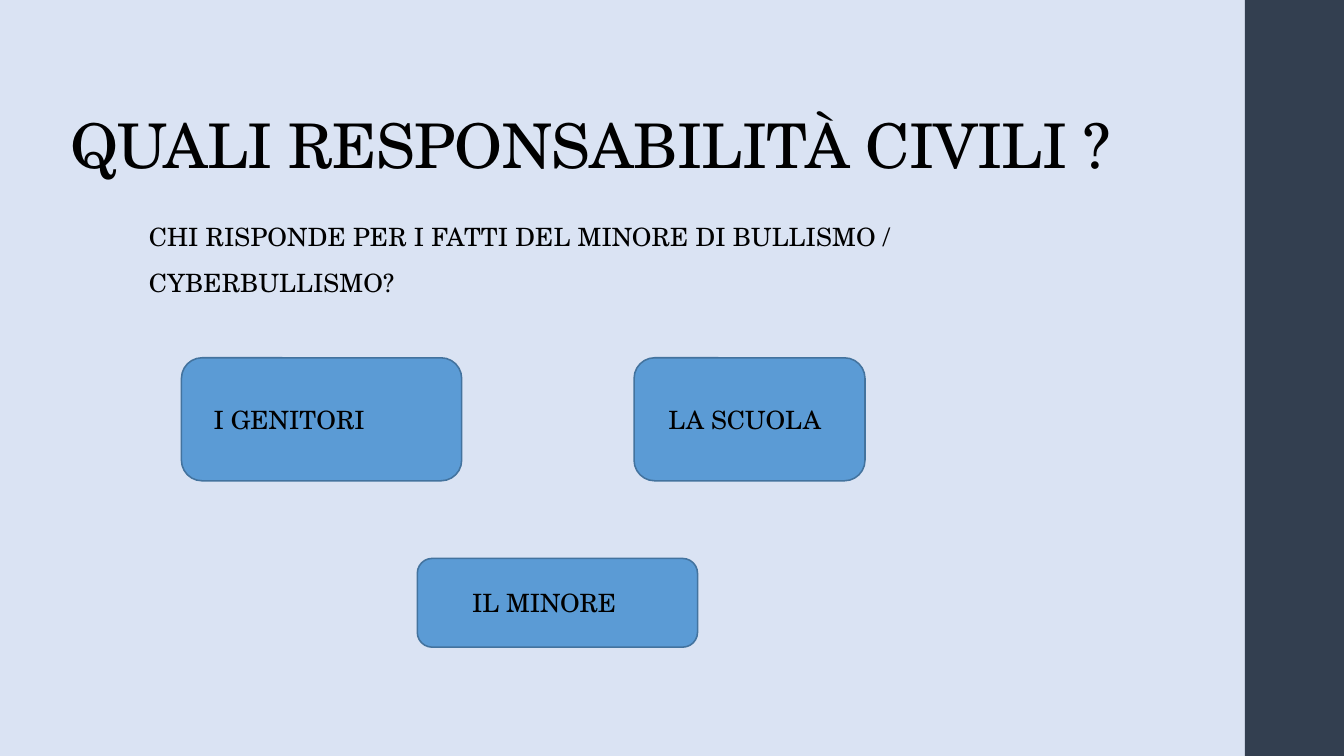
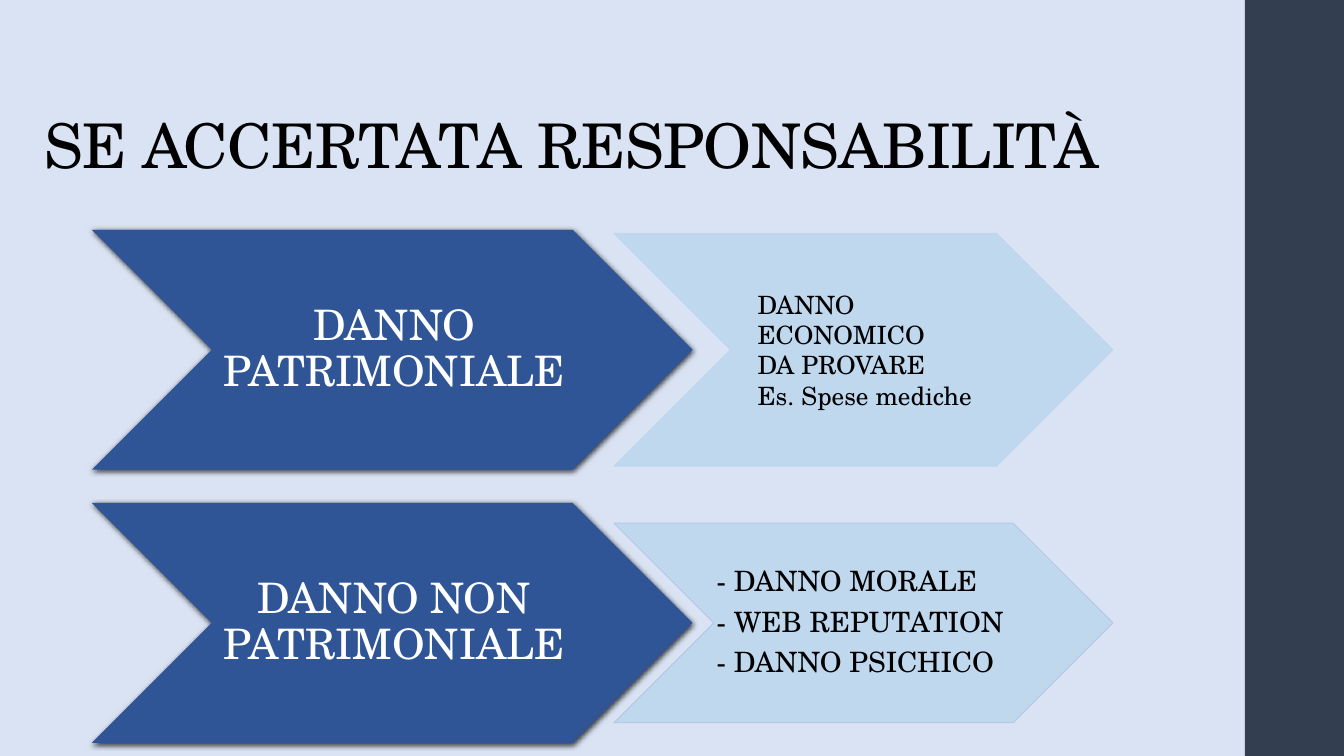
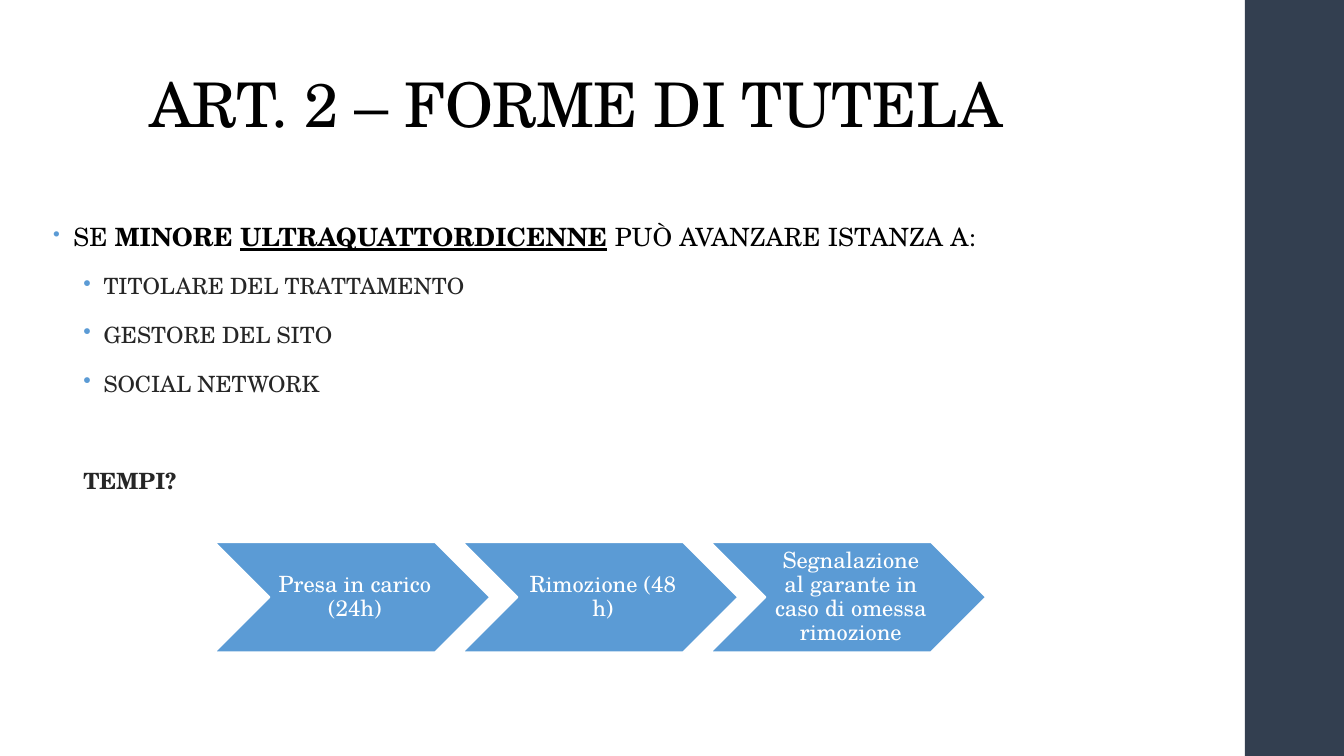
"""Three slides on civil liability and protection in cases of bullying and cyberbullying."""
from lxml import etree
from pptx import Presentation
from pptx.dml.color import RGBColor
from pptx.enum.shapes import MSO_SHAPE
from pptx.enum.text import MSO_ANCHOR, PP_ALIGN
from pptx.oxml import parse_xml
from pptx.oxml.ns import qn
from pptx.util import Inches, Pt

RECT, ROUNDED, CHEVRON = MSO_SHAPE.RECTANGLE, MSO_SHAPE.ROUNDED_RECTANGLE, MSO_SHAPE.CHEVRON
LEFT, CENTER = PP_ALIGN.LEFT, PP_ALIGN.CENTER
TOP, MIDDLE, BOTTOM = MSO_ANCHOR.TOP, MSO_ANCHOR.MIDDLE, MSO_ANCHOR.BOTTOM
FONT = "TeX Gyre Schola"
COLORS = {
    "pale": "DAE3F3", "band": "333F50", "black": "000000", "grey": "262626",
    "white": "FFFFFF", "blue": "5B9BD5", "outline": "43739E", "navy": "2F5597",
    "sky": "BDD7EE", "sky_edge": "B4C7E7",
}
RGB = {name: RGBColor.from_string(value) for name, value in COLORS.items()}
DRAWING_NS = "http://schemas.openxmlformats.org/drawingml/2006/main"
SHADOW = (
    f'<a:effectLst xmlns:a="{DRAWING_NS}"><a:outerShdw blurRad="50800" dist="15240" dir="5400000" '
    'rotWithShape="0"><a:srgbClr val="000000"><a:alpha val="75000"/></a:srgbClr>'
    '</a:outerShdw></a:effectLst>'
)

BAND_X = 92.63
TITLE_Y, TITLE_RIGHT = 5.33, 89.85
BODY_Y, BODY_H, BODY_RIGHT = 26.67, 63.47, 80.85

deck = Presentation()
deck.slide_width, deck.slide_height = Inches(13.33), Inches(7.5)


def place(slide, kind, x, y, w, h, fill=None, line=None, width=1.1):
    """Add a shape, or a text box when kind is None, at percentages of the slide."""
    across, down = deck.slide_width / 100, deck.slide_height / 100
    area = [round(v) for v in (x * across, y * down, w * across, h * down)]
    if kind is None:
        return slide.shapes.add_textbox(*area)
    shape = slide.shapes.add_shape(kind, *area)
    shape.shadow.inherit = False
    shape.fill.solid()
    shape.fill.fore_color.rgb = RGB[fill]
    if line:
        shape.line.color.rgb = RGB[line]
        shape.line.width = Pt(width)
    else:
        shape.line.fill.background()
    return shape


def write(shape, text, size, color="black", align=LEFT, anchor=MIDDLE, leading=1.0,
          before=0, after=0, tracking=0, insets=(0.1, 0.05, 0.1, 0.05)):
    """Fill a shape with uniformly styled paragraphs and return them."""
    frame = shape.text_frame
    frame.word_wrap, frame.vertical_anchor = True, anchor
    frame.margin_left, frame.margin_top, frame.margin_right, frame.margin_bottom = map(Inches, insets)
    frame.text = text
    for paragraph in frame.paragraphs:
        paragraph.alignment, paragraph.line_spacing = align, leading
        paragraph.space_before, paragraph.space_after = Pt(before), Pt(after)
        font = paragraph.font
        font.name, font.size, font.color.rgb = FONT, Pt(size), RGB[color]
        font._rPr.set("spc", str(tracking))
    return frame.paragraphs


pages = []
for heading, title_x, title_h, background in (
    ("QUALI RESPONSABILITÀ CIVILI ?", 4.5, 19.33, "pale"),
    ("SE ACCERTATA RESPONSABILITÀ", 2.55, 19.33, "pale"),
    ("ART. 2 – FORME DI TUTELA", 10.35, 14, "white"),
):
    page = deck.slides.add_slide(deck.slide_layouts[6])
    page.background.fill.solid()
    page.background.fill.fore_color.rgb = RGB[background]
    place(page, RECT, BAND_X, 0, 100 - BAND_X, 100, "band")
    title = place(page, None, title_x, TITLE_Y, TITLE_RIGHT - title_x, title_h)
    write(title, heading, 44, anchor=BOTTOM, leading=0.9, tracking=-50)
    pages.append(page)
liability, damages, protection = pages

question = place(liability, None, 10.35, BODY_Y, BODY_RIGHT - 10.35, BODY_H)
write(question, "CHI RISPONDE PER I FATTI DEL MINORE DI BULLISMO / CYBERBULLISMO?", 18,
      anchor=TOP, leading=1.5, before=14, after=2, tracking=10)
for party, x, y, w, h, indent in (
    ("I GENITORI", 13.5, 47.33, 20.85, 16.27, 0.26),
    ("LA SCUOLA", 47.18, 47.33, 17.18, 16.27, 0.28),
    ("IL MINORE", 31.05, 73.87, 20.85, 11.73, 0.5),
):
    write(place(liability, ROUNDED, x, y, w, h, "blue", "outline"), party, 18,
          insets=(indent, 0.05, 0, 0.05))

DAMAGE_Y, DAMAGE_H, DAMAGE_PITCH = 30.4, 31.73, 36.13
for row, (damage, examples, example_h, edge, size, leading, after, indent) in enumerate((
    ("DANNO PATRIMONIALE", "DANNO ECONOMICO\nDA PROVARE\nEs. Spese mediche",
     30.8, "sky", 18, 1.0, 0, 0.27),
    ("DANNO NON PATRIMONIALE", "- DANNO MORALE\n- WEB REPUTATION\n- DANNO PSICHICO",
     26.4, "sky_edge", 20, 0.9, 7, 0.03),
)):
    y = DAMAGE_Y + row * DAMAGE_PITCH
    kind_arrow = place(damages, CHEVRON, 6.83, y, 44.7, DAMAGE_H, "navy")
    properties = kind_arrow._element.spPr
    properties.replace(properties.find(qn("a:effectLst")), parse_xml(SHADOW))
    write(kind_arrow, damage, 30, "white", CENTER, leading=0.9, after=10.5,
          insets=(0.04, 0.02, 0, 0.02))
    example_arrow = place(damages, CHEVRON, 45.68, y + (DAMAGE_H - example_h) / 2, 37.13,
                          example_h, "sky", edge, 0.75)
    for tint in example_arrow._element.spPr.iter(qn("a:srgbClr")):
        etree.SubElement(tint, qn("a:alpha")).set("val", "90000")
    write(example_arrow, examples, size, leading=leading, after=after,
          insets=(indent, 0.01, 0, 0.01))

request = place(protection, None, 3.22, BODY_Y, BODY_RIGHT - 3.22, BODY_H)
lead, *recipients, timing = write(
    request, "SE \nTITOLARE DEL TRATTAMENTO\nGESTORE DEL SITO\nSOCIAL NETWORK\nTEMPI?", 16, "grey",
    anchor=TOP, leading=1.5, before=3, after=3)
for words, bold, underline in (
    ("MINORE ", True, False), ("ULTRAQUATTORDICENNE", True, True),
    (" ", True, False), ("PUÒ AVANZARE ISTANZA A:", False, False),
):
    run = lead.add_run()
    run.text, run.font.bold, run.font.underline = words, bold, underline
lead.font.size, lead.font.color.rgb = Pt(18), RGB["black"]
lead.font._rPr.set("spc", "10")
lead.space_before, lead.space_after = Pt(14), Pt(2)
timing.font.bold = True
timing.space_before = Pt(38)
timing._p.pPr.set("marL", str(Inches(0.3)))
for item, margin, share in [(lead, 0.2, 80)] + [(recipient, 0.5, 100) for recipient in recipients]:
    layout = item._p.pPr
    layout.set("marL", str(Inches(margin)))
    layout.set("indent", str(Inches(-0.2)))
    bullet = etree.Element(qn("a:buClr"))
    etree.SubElement(bullet, qn("a:srgbClr")).set("val", COLORS["blue"])
    scale = etree.Element(qn("a:buSzPct"), val=str(share * 1000))
    mark = etree.Element(qn("a:buChar"), char="•")
    for part in (bullet, scale, mark):
        layout.find(qn("a:defRPr")).addprevious(part)

for column, step in enumerate((
    "Presa in carico (24h)", "Rimozione (48 h)",
    "Segnalazione al garante in caso di omessa rimozione",
)):
    write(place(protection, CHEVRON, 15.98 + column * 18.45, 71.73, 20.48, 14.53, "blue", "white"),
          step, 16, "white", CENTER, leading=0.9, after=5.6, insets=(0.07, 0.02, 0.02, 0.02))

deck.save("out.pptx")
